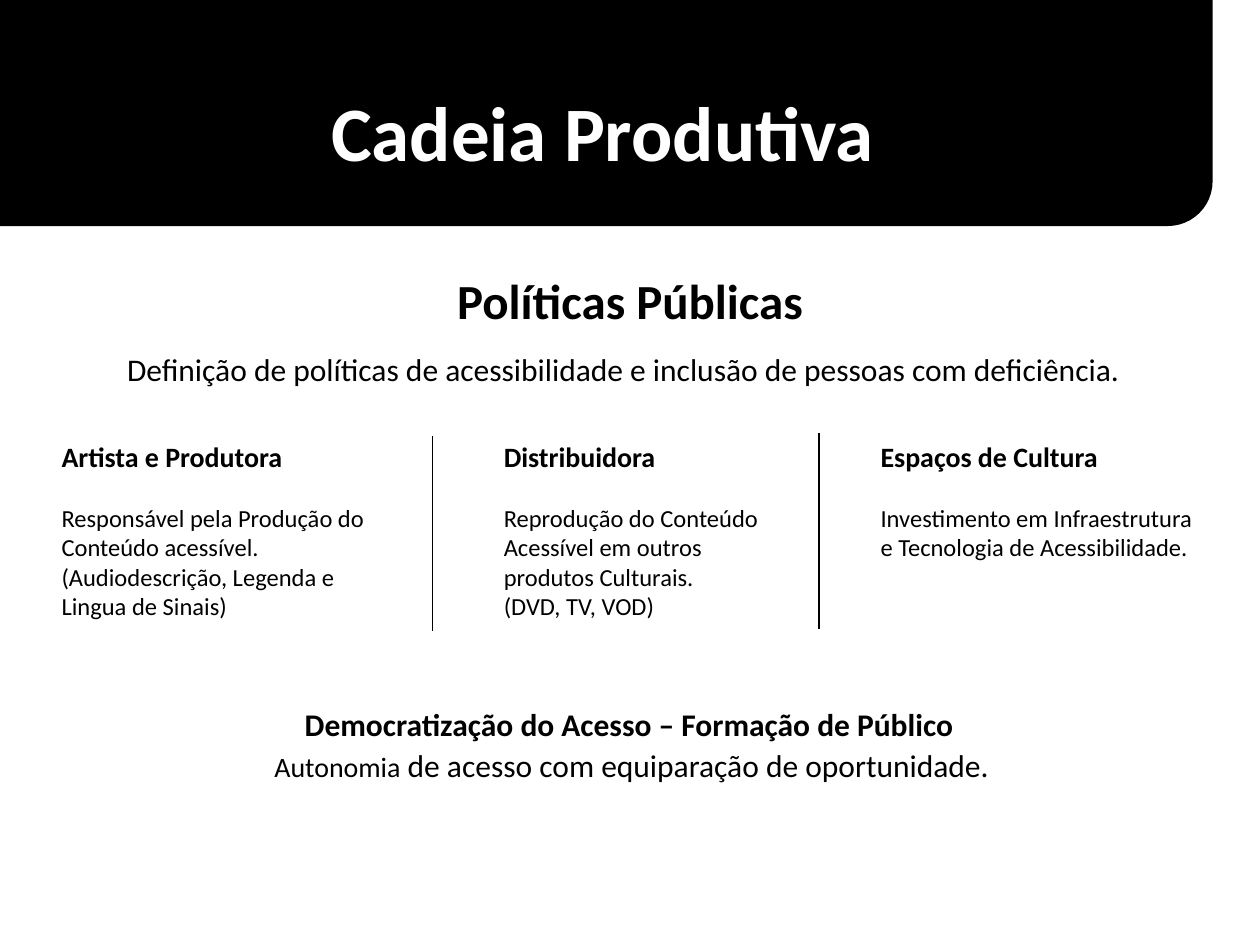
from pptx import Presentation
from pptx.dml.color import RGBColor
from pptx.enum import shapes, text
from pptx.oxml.ns import qn
from pptx.util import Inches, Pt
from lxml import etree

BLACK = RGBColor(0, 0, 0)
WHITE = RGBColor(255, 255, 255)
FONT = "Calibri"
COLUMN_TOP = 3.44
COLUMNS = [
    (0.39, 2.64, 1.55, "Artista e Produtora",
     ["Responsável pela Produção do Conteúdo acessível.",
      "(Audiodescrição, Legenda e Lingua de Sinais)"]),
    (3.9, 2.22, 1.55, "Distribuidora",
     ["Reprodução do Conteúdo Acessível em outros produtos Culturais.",
      "(DVD, TV, VOD)"]),
    (6.89, 2.68, 1.08, "Espaços de Cultura",
     ["Investimento em Infraestrutura e Tecnologia de Acessibilidade."]),
]
DIVIDERS = [(3.43, 3.46), (6.5, 3.44)]


def add_run(p, content, size=14, bold=False, color=BLACK):
    r = p.add_run()
    r.text = content
    r.font.name = FONT
    r.font.size = Pt(size)
    r.font.bold = bold
    r.font.color.rgb = color


def add_text(s, left, top, width, height, content, wrap=True,
             align=text.PP_ALIGN.LEFT, anchor=text.MSO_ANCHOR.TOP, **style):
    sp = s.shapes.add_textbox(Inches(left), Inches(top),
                              Inches(width), Inches(height))
    tf = sp.text_frame
    tf.word_wrap = wrap
    tf.vertical_anchor = anchor
    p = tf.paragraphs[0]
    p.alignment = align
    add_run(p, content, **style)
    return tf


def add_column(s, left, width, height, heading, lines):
    tf = add_text(s, left, COLUMN_TOP, width, height, heading,
                  size=16, bold=True)
    for i, line in enumerate(lines):
        p = tf.add_paragraph()
        p.space_before = Pt(0 if i else 17)
        add_run(p, line)


def add_banner(s):
    sp = s.shapes.add_shape(shapes.MSO_SHAPE.ROUND_2_DIAG_RECTANGLE,
                            Inches(-0.04), Inches(-0.27),
                            Inches(9.65), Inches(2.05))
    sp.shadow.inherit = False
    sp.fill.solid()
    sp.fill.fore_color.rgb = BLACK
    sp.line.color.rgb = BLACK
    sp.line.width = Pt(2)


def add_divider(s, x, top, height=1.55):
    line = s.shapes.add_connector(shapes.MSO_CONNECTOR.STRAIGHT,
                                  Inches(x), Inches(top),
                                  Inches(x), Inches(top + height))
    line.line.color.rgb = BLACK
    line.line.width = Pt(0.75)
    etree.SubElement(line._element.spPr, qn("a:effectLst"))


def main():
    prs = Presentation()
    prs.slide_width = Inches(10)
    prs.slide_height = Inches(7.5)
    s = prs.slides.add_slide(prs.slide_layouts[6])

    add_banner(s)
    add_text(s, -0.04, 0.53, 9.65, 1.01, "Cadeia Produtiva",
             align=text.PP_ALIGN.CENTER, anchor=text.MSO_ANCHOR.MIDDLE,
             size=44, bold=True, color=WHITE)
    add_text(s, 1.5, 2.1, 7, 0.49, "Políticas Públicas",
             align=text.PP_ALIGN.CENTER, size=28, bold=True)
    add_text(s, 0.91, 2.73, 8.19, 0.4,
             "Definição de políticas de acessibilidade e inclusão "
             "de pessoas com deficiência.", size=18)
    for column in COLUMNS:
        add_column(s, *column)
    for x, top in DIVIDERS:
        add_divider(s, x, top)
    add_text(s, 2.32, 5.55, 5.39, 0.4,
             "Democratização do Acesso – Formação de Público",
             wrap=False, size=18, bold=True)
    tf = add_text(s, 2.08, 5.87, 5.91, 0.4, "Autonomia", size=16)
    add_run(tf.paragraphs[0], " de acesso com equiparação de oportunidade.",
            size=18)

    prs.save("out.pptx")


if __name__ == "__main__":
    main()
